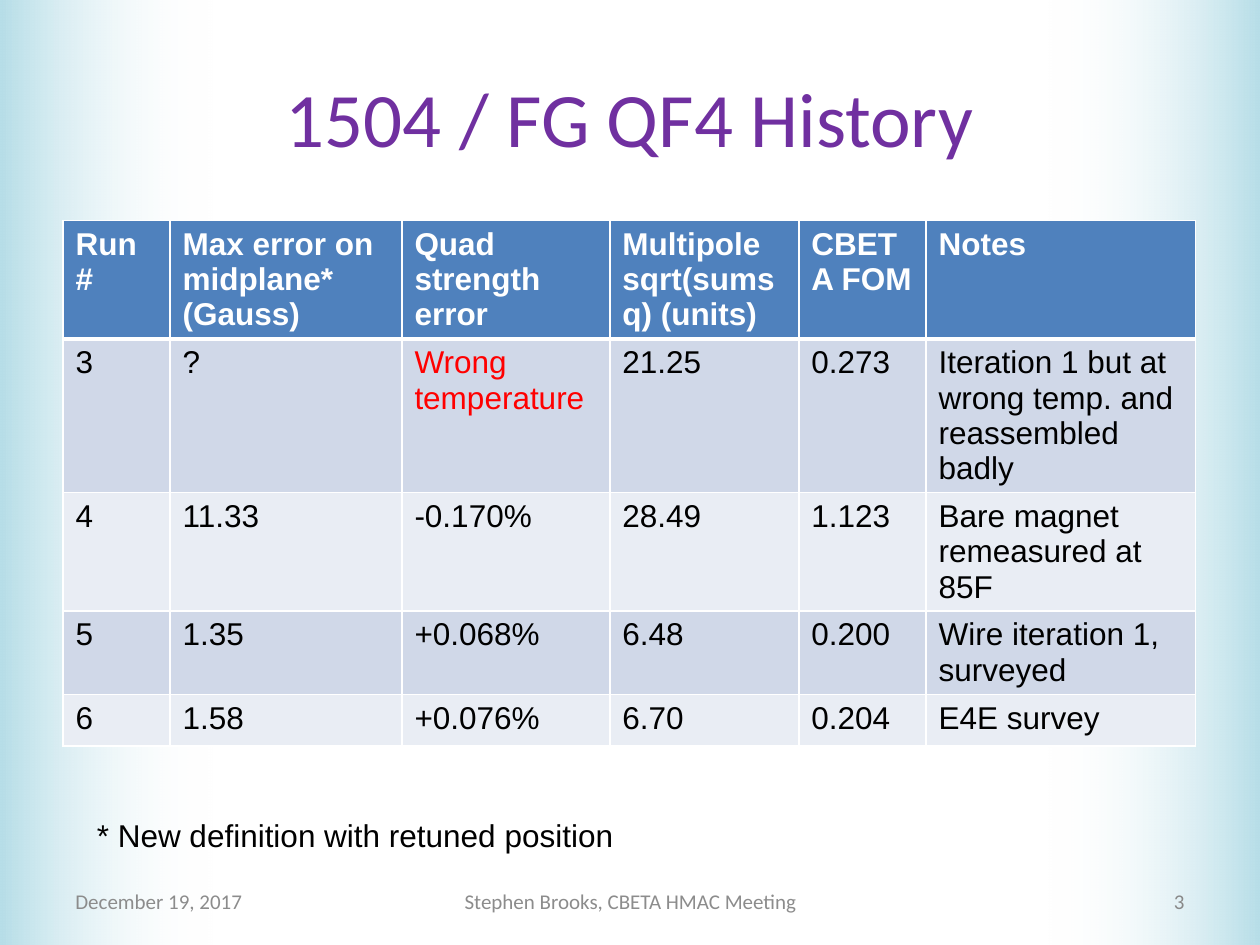
from dataclasses import dataclass
from typing import Optional

from lxml.etree import SubElement
from pptx import Presentation
from pptx.dml.color import RGBColor as Rgb
from pptx.enum.shapes import MSO_SHAPE as Shape
from pptx.enum.text import MSO_ANCHOR as Anchor, MSO_AUTO_SIZE as AutoSize, PP_ALIGN as Align
from pptx.oxml import parse_xml
from pptx.oxml.ns import nsdecls, qn
from pptx.util import Inches, Pt


@dataclass(frozen=True)
class Theme:
    heading: str = "Calibri"
    body: str = "Arial"
    title_size: int = 44
    body_size: int = 18
    footer_size: int = 12
    title: str = "7030A0"
    ink: str = "000000"
    paper: str = "FFFFFF"
    warning: str = "FF0000"
    footer: str = "8C8C8C"
    page_number: str = "898989"
    edge: str = "B7DEE8"
    header: str = "4F81BD"
    stripes: tuple = ("D0D8E8", "E9EDF4")
    rule: int = 1
    header_rule: int = 3


@dataclass(frozen=True)
class Box:
    """Place and size in percent of the slide's width and height."""
    left: float
    top: float
    width: float
    height: float

    def emu(self) -> tuple:
        return (across(self.left), down(self.top), across(self.width), down(self.height))


@dataclass(frozen=True)
class Label:
    text: str
    box: Box
    size: int
    color: str
    font: str
    align: Align = Align.LEFT
    anchor: Anchor = Anchor.MIDDLE
    wrap: bool = True


THEME = Theme()
WIDTH, HEIGHT = Inches(10), Inches(7.5)

BANDS = ((Box(83.1, 0, 16.9, 100), 180), (Box(0, 0, 16.9, 100), 0))
TITLE = Label("1504 / FG QF4 History", Box(5, 4, 90, 16.67), THEME.title_size,
              THEME.title, THEME.heading, Align.CENTER)

TABLE_BOX = Box(5, 23.33, 89.9, 50.8)
COLUMN_SHARES = (8.5, 18.4, 16.5, 15, 10.1, 21.4)
ROW_SHARE = 5.47
HEADINGS = ("Run #", "Max error on midplane* (Gauss)", "Quad strength error",
            "Multipole sqrt(sumsq) (units)", "CBETA FOM", "Notes")
WRONG = "Wrong temperature"
RUNS = (
    ("3", "?", WRONG, "21.25", "0.273",
     "Iteration 1 but at wrong temp. and reassembled badly"),
    ("4", "11.33", "-0.170%", "28.49", "1.123", "Bare magnet remeasured at 85F"),
    ("5", "1.35", "+0.068%", "6.48", "0.200", "Wire iteration 1, surveyed"),
    ("6", "1.58", "+0.076%", "6.70", "0.204", "E4E survey"),
)

FOOTER_TOP, FOOTER_HEIGHT = 92.67, 5.33
LABELS = (
    Label("December 19, 2017", Box(5, FOOTER_TOP, 23.3, FOOTER_HEIGHT),
          THEME.footer_size, THEME.footer, THEME.heading),
    Label("Stephen Brooks, CBETA HMAC Meeting", Box(34.2, FOOTER_TOP, 31.7, FOOTER_HEIGHT),
          THEME.footer_size, THEME.footer, THEME.heading, Align.CENTER),
    Label("3", Box(71.7, FOOTER_TOP, 23.3, FOOTER_HEIGHT),
          THEME.footer_size, THEME.page_number, THEME.heading, Align.RIGHT),
    Label("* New definition with retuned position", Box(6.7, 85.73, 43.4, 5.33),
          THEME.body_size, THEME.ink, THEME.body, anchor=Anchor.TOP, wrap=False),
)


def across(share: float) -> int:
    return round(WIDTH * share / 100)


def down(share: float) -> int:
    return round(HEIGHT * share / 100)


def format_runs(frame, font: str, size: int, color: str, bold: bool = False,
                align: Optional[Align] = None) -> None:
    for paragraph in frame.paragraphs:
        paragraph.alignment = align
        for run in paragraph.runs:
            run.font.name, run.font.size, run.font.bold = font, Pt(size), bold
            run.font.color.rgb = Rgb.from_string(color)


def fill_label(holder, label: Label) -> None:
    holder.left, holder.top, holder.width, holder.height = label.box.emu()
    frame = holder.text_frame
    frame.text = label.text
    frame.word_wrap, frame.vertical_anchor = label.wrap, label.anchor
    frame.auto_size = AutoSize.NONE if label.wrap else AutoSize.SHAPE_TO_FIT_TEXT
    format_runs(frame, label.font, label.size, label.color, align=label.align)


def add_band(slide, box: Box, rotation: int, depth: int) -> None:
    """Edge colour that fades to clear, placed behind the text."""
    band = slide.shapes.add_shape(Shape.RECTANGLE, *box.emu())
    band.rotation = rotation
    band.shadow.inherit = False
    band.line.fill.background()
    band.fill.gradient()
    band.fill.gradient_angle = 0
    for stop, color in zip(band.fill.gradient_stops, (THEME.edge, THEME.paper)):
        stop.color.rgb = Rgb.from_string(color)
    clear_end = list(band.fill._fill._gradFill.iter(qn("a:srgbClr")))[-1]
    SubElement(clear_end, qn("a:alpha")).set("val", "0")
    slide.shapes._spTree.insert(2 + depth, band._element)


def set_borders(cell, top: int, bottom: int) -> None:
    widths = {"L": THEME.rule, "R": THEME.rule, "T": top, "B": bottom}
    properties = cell._tc.get_or_add_tcPr()
    for position, (side, points) in enumerate(widths.items()):
        properties.insert(position, parse_xml(
            f'<a:ln{side} {nsdecls("a")} w="{Pt(points)}"><a:solidFill>'
            f'<a:srgbClr val="{THEME.paper}"/></a:solidFill></a:ln{side}>'))


def fill_cell(cell, text: str, row: int) -> None:
    is_header = row == 0
    cell.text_frame.text = text
    if is_header:
        background, color = THEME.header, THEME.paper
    else:
        background = THEME.stripes[(row - 1) % 2]
        color = THEME.warning if text == WRONG else THEME.ink
    cell.fill.solid()
    cell.fill.fore_color.rgb = Rgb.from_string(background)
    format_runs(cell.text_frame, THEME.body, THEME.body_size, color, is_header)
    set_borders(cell, THEME.header_rule if row == 1 else THEME.rule,
                THEME.header_rule if is_header else THEME.rule)


def add_history(slide) -> None:
    records = (HEADINGS, *RUNS)
    frame = slide.shapes.add_table(len(records), len(HEADINGS), *TABLE_BOX.emu())
    history = frame.table
    for column, share in zip(history.columns, COLUMN_SHARES):
        column.width = across(share)
    for index, record in enumerate(records):
        # Rows grow from one line to fit their text
        history.rows[index].height = down(ROW_SHARE)
        for cell, text in zip(history.rows[index].cells, record):
            fill_cell(cell, text, index)
    frame.height = down(TABLE_BOX.height)


def main() -> None:
    deck = Presentation()
    deck.slide_width, deck.slide_height = WIDTH, HEIGHT
    slide = deck.slides.add_slide(deck.slide_layouts.get_by_name("Title Only"))

    # Background bands
    for depth, (box, rotation) in enumerate(BANDS):
        add_band(slide, box, rotation, depth)

    # Title and table
    fill_label(slide.shapes.title, TITLE)
    add_history(slide)

    # Footer and footnote
    for label in LABELS:
        fill_label(slide.shapes.add_textbox(*label.box.emu()), label)

    deck.save("out.pptx")


if __name__ == "__main__":
    main()
